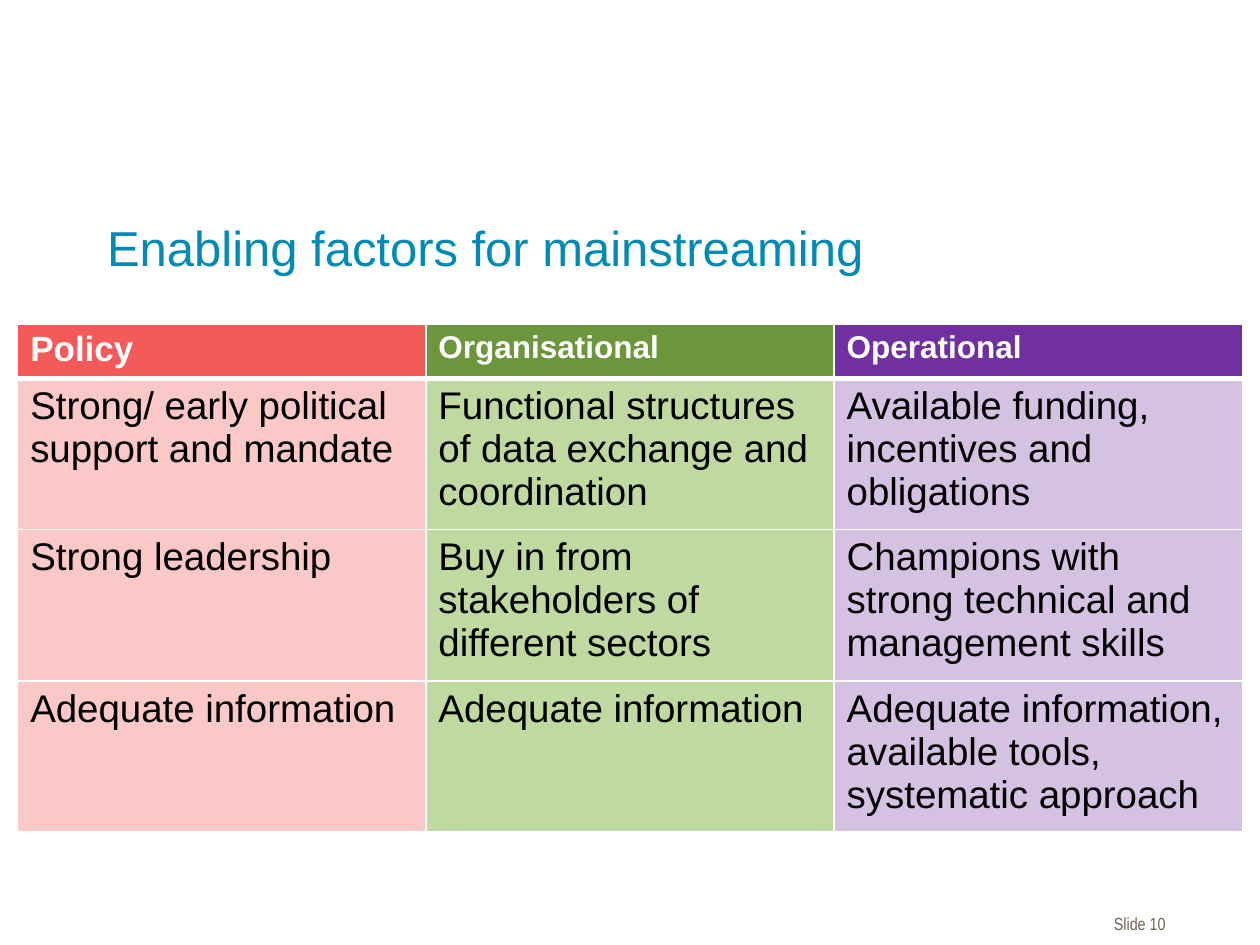
from dataclasses import dataclass

from lxml import etree
from pptx import Presentation
from pptx import util as u
from pptx.dml.color import RGBColor
from pptx.enum import text
from pptx.oxml import ns


@dataclass(frozen=True)
class Theme:
    font: str = "Arial"
    footer_font: str = "Arial Narrow"
    title_color: str = "008AB5"
    footer_color: str = "6E6452"
    header_color: str = "FFFFFF"
    body_color: str = "000000"
    border_color: str = "FFFFFF"
    title_size: int = 28
    body_size: int = 22
    footer_size: int = 10
    border: int = 1
    header_rule: int = 3


THEME = Theme()


@dataclass(frozen=True)
class Column:
    heading: str
    heading_size: int
    header_fill: str
    body_fill: str
    entries: tuple
    opacity: int = 100


COLUMNS = (
    Column("Policy", 20, "F35A59", "FBC8C8", (
        "Strong/ early political support and mandate",
        "Strong leadership",
        "Adequate information")),
    Column("Organisational", 18, "6C963C", "BFD9A0", (
        "Functional structures of data exchange and coordination",
        "Buy in from stakeholders of different sectors",
        "Adequate information")),
    Column("Operational", 18, "7030A0", "7030A0", (
        "Available funding, incentives and obligations",
        "Champions with strong technical and management skills",
        "Adequate information,\navailable tools, systematic approach"), 29),
)


def style_text(frame, size, color, font=THEME.font, bold=False,
               align=text.PP_ALIGN.LEFT):
    for paragraph in frame.paragraphs:
        paragraph.alignment = align
        paragraph.font.name = font
        paragraph.font.size = u.Pt(size)
        paragraph.font.bold = bold
        paragraph.font.color.rgb = RGBColor.from_string(color)


def set_borders(cell, widths):
    """Draw the left, right, top and bottom borders, ahead of the cell fill."""
    properties = cell._tc.get_or_add_tcPr()
    for index, (side, width) in enumerate(zip("LRTB", widths)):
        line = etree.Element(ns.qn(f"a:ln{side}"), w=str(u.Pt(width)))
        fill = etree.SubElement(line, ns.qn("a:solidFill"))
        etree.SubElement(fill, ns.qn("a:srgbClr"), val=THEME.border_color)
        properties.insert(index, line)


def fill_cell(cell, color, opacity=100):
    cell.fill.solid()
    cell.fill.fore_color.rgb = RGBColor.from_string(color)
    if opacity < 100:
        color_element = cell._tc.tcPr.find(".//" + ns.qn("a:srgbClr"))
        etree.SubElement(color_element, ns.qn("a:alpha"), val=str(opacity * 1000))


def place_title(slide, box):
    title = slide.shapes.title
    title.left, title.top, title.width, title.height = box
    frame = title.text_frame
    frame.text = "Enabling factors for mainstreaming"
    frame.vertical_anchor = text.MSO_ANCHOR.MIDDLE
    frame.auto_size = text.MSO_AUTO_SIZE.NONE
    style_text(frame, THEME.title_size, THEME.title_color)


def place_factor_table(slide, box, header_height):
    row_count = 1 + len(COLUMNS[0].entries)
    table = slide.shapes.add_table(row_count, len(COLUMNS), *box).table
    body_height = (box[3] - header_height) // (row_count - 1)
    for index, row in enumerate(table.rows):
        row.height = body_height if index else header_height

    for column_index, column in enumerate(COLUMNS):
        # Header cell
        header = table.cell(0, column_index)
        header.text = column.heading
        style_text(header.text_frame, column.heading_size, THEME.header_color, bold=True)
        fill_cell(header, column.header_fill)
        set_borders(header, (THEME.border,) * 3 + (THEME.header_rule,))

        # Body cells
        for row_index, entry in enumerate(column.entries, start=1):
            cell = table.cell(row_index, column_index)
            cell.text = entry
            style_text(cell.text_frame, THEME.body_size, THEME.body_color)
            fill_cell(cell, column.body_fill, column.opacity)
            top = THEME.header_rule if row_index == 1 else THEME.border
            set_borders(cell, (THEME.border, THEME.border, top, THEME.border))


def place_slide_number(slide, box):
    frame = slide.shapes.add_textbox(*box).text_frame
    frame.word_wrap = True
    frame.margin_right = 0
    frame.text = "Slide 10"
    style_text(frame, THEME.footer_size, THEME.footer_color, THEME.footer_font,
               align=text.PP_ALIGN.RIGHT)


def inches(*lengths):
    return tuple(u.Inches(length) for length in lengths)


def main():
    presentation = Presentation()
    presentation.slide_width, presentation.slide_height = inches(10, 7.5)
    slide = presentation.slides.add_slide(presentation.slide_layouts[5])
    place_slide_number(slide, inches(8.24, 7.2, 1.01, 0.27))
    place_title(slide, inches(0.75, 1.62, 8.5, 0.68))
    place_factor_table(slide, inches(0.14, 2.57, 9.72, 3.78), u.Inches(0.41))
    presentation.save("out.pptx")


if __name__ == "__main__":
    main()
